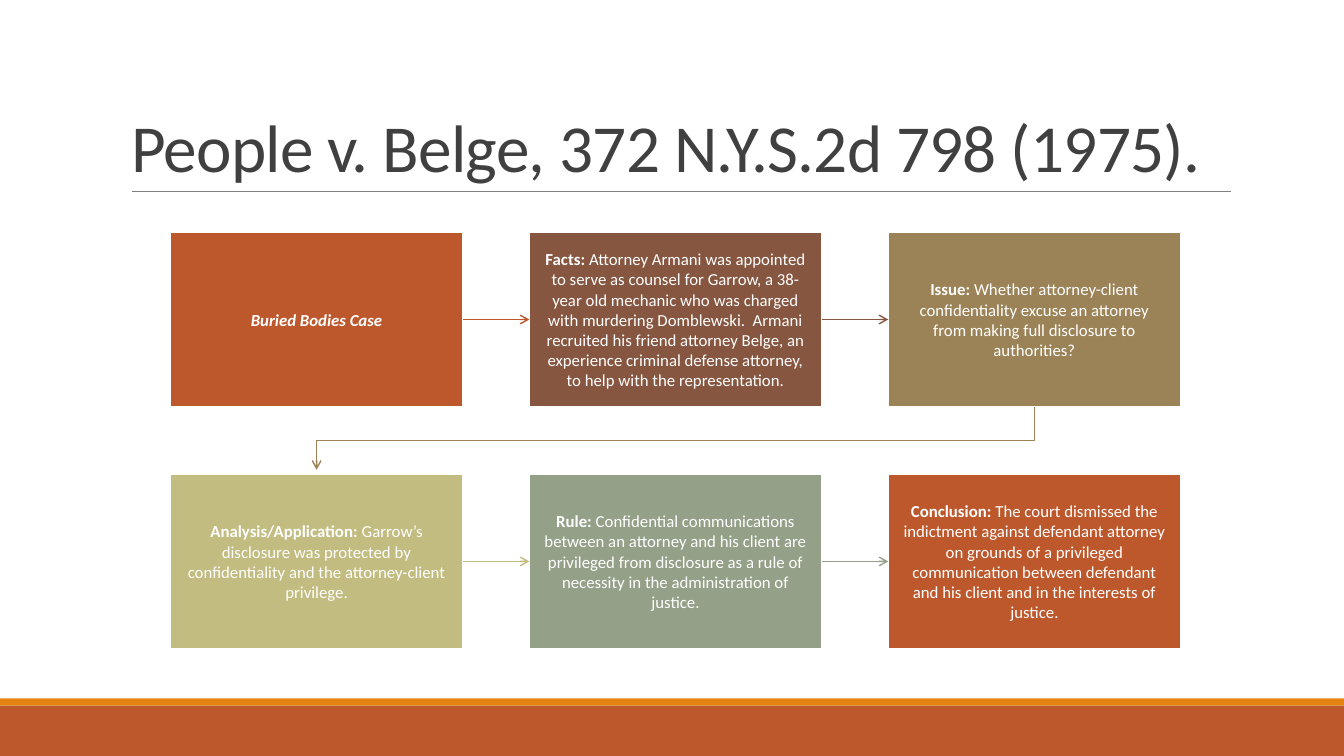
from dataclasses import dataclass

from lxml.etree import SubElement
from pptx import Presentation
from pptx.dml.color import RGBColor
from pptx.enum.shapes import MSO_CONNECTOR as Conn, MSO_SHAPE as Shape
from pptx.enum.text import MSO_ANCHOR as Anchor, MSO_AUTO_SIZE as AutoSize, PP_ALIGN as Align
from pptx.oxml.ns import qn
from pptx.util import Inches, Pt

WHITE = RGBColor(0xFF, 0xFF, 0xFF)
DARK = RGBColor(0x40, 0x40, 0x40)
GRAY = RGBColor(0x80, 0x80, 0x80)
ORANGE = RGBColor(0xE4, 0x83, 0x12)
RUST = RGBColor(0xBD, 0x58, 0x2C)
BROWN = RGBColor(0x86, 0x56, 0x40)
TAN = RGBColor(0x9B, 0x83, 0x57)
STRAW = RGBColor(0xC2, 0xBC, 0x80)
SAGE = RGBColor(0x94, 0xA0, 0x88)

FONT = "Calibri"
SLIDE_W, SLIDE_H = 13.33, 7.5
COLS = 3
GRID_LEFT, GRID_TOP = 1.69, 2.3
COL_PITCH, ROW_PITCH = 3.56, 2.4
BOX_W, BOX_H = 2.9, 1.74
ARROW_GAP = 0.04
TOP, LEFT, BOTTOM, RIGHT = range(4)


@dataclass(frozen=True)
class Step:
    label: str
    body: str
    color: RGBColor
    italic: bool = False


STEPS = [
    Step("Buried Bodies Case", "", RUST, italic=True),
    Step("Facts: ", "Attorney Armani was appointed to serve as counsel for Garrow, "
         "a 38-year old mechanic who was charged with murdering Domblewski.  Armani "
         "recruited his friend attorney Belge, an experience criminal defense attorney, "
         "to help with the representation.", BROWN),
    Step("Issue: ", "Whether attorney-client confidentiality excuse an attorney from "
         "making full disclosure to authorities?", TAN),
    Step("Analysis/Application: ", "Garrow’s disclosure was protected by confidentiality "
         "and the attorney-client privilege.", STRAW),
    Step("Rule: ", "Confidential communications between an attorney and his client are "
         "privileged from disclosure as a rule of necessity in the administration of "
         "justice.", SAGE),
    Step("Conclusion: ", "The court dismissed the indictment against defendant attorney "
         "on grounds of a privileged communication between defendant and his client and "
         "in the interests of justice.", RUST),
]


def add_run(p, text: str, *, size: float, color: RGBColor, bold=False, italic=False):
    r = p.add_run()
    r.text = text
    f = r.font
    f.name, f.size, f.bold, f.italic = FONT, Pt(size), bold, italic
    f.color.rgb = color
    return r


def add_rect(s, left: float, top: float, width: float, height: float, fill: RGBColor):
    sp = s.shapes.add_shape(Shape.RECTANGLE, Inches(left), Inches(top),
                            Inches(width), Inches(height))
    sp.shadow.inherit = False
    sp.fill.solid()
    sp.fill.fore_color.rgb = fill
    sp.line.fill.background()
    return sp


def add_line(s, x1: float, y1: float, x2: float, y2: float, color: RGBColor, weight: float):
    line = s.shapes.add_connector(Conn.STRAIGHT, Inches(x1), Inches(y1),
                                  Inches(x2), Inches(y2))
    line.line.color.rgb = color
    line.line.width = Pt(weight)
    SubElement(line._element.spPr, qn("a:effectLst"))
    return line


def add_arrowhead(sp) -> None:
    SubElement(sp.line._get_or_add_ln(), qn("a:tailEnd"), type="arrow")


def add_title(s, text: str) -> None:
    title = s.shapes.title
    title.left, title.top = Inches(1.2), Inches(0.31)
    title.width, title.height = Inches(11), Inches(1.59)
    tf = title.text_frame
    tf.auto_size, tf.word_wrap = AutoSize.NONE, True
    tf.vertical_anchor = Anchor.BOTTOM
    p = tf.paragraphs[0]
    p.alignment, p.line_spacing = Align.LEFT, 0.85
    r = add_run(p, text, size=48, color=DARK)
    r.font._element.set("spc", "-50")


def cell_origin(index: int) -> tuple[float, float]:
    row, col = divmod(index, COLS)
    return GRID_LEFT + col * COL_PITCH, GRID_TOP + row * ROW_PITCH


def add_step(s, index: int, step: Step):
    sp = add_rect(s, *cell_origin(index), BOX_W, BOX_H, step.color)
    sp.line.color.rgb = WHITE
    sp.line.width = Pt(1.25)
    tf = sp.text_frame
    tf.word_wrap, tf.vertical_anchor = True, Anchor.MIDDLE
    tf.margin_left = tf.margin_right = Inches(0.14)
    tf.margin_top = tf.margin_bottom = Inches(0.15)
    p = tf.paragraphs[0]
    p.alignment = Align.CENTER
    add_run(p, step.label, size=12, color=WHITE, bold=True, italic=step.italic)
    if step.body:
        add_run(p, step.body, size=12, color=WHITE)
    return sp


def join_in_row(s, start, end, color: RGBColor) -> None:
    line = add_line(s, 0, 0, 1, 1, color, 1)
    line.begin_connect(start, RIGHT)
    line.end_connect(end, LEFT)
    add_arrowhead(line)


def join_rows(s, index: int, color: RGBColor) -> None:
    """Bent arrow from the last box of a row to the first box of the next."""
    (x1, y1), (x2, y2) = cell_origin(index), cell_origin(index + 1)
    x1, x2, y1 = x1 + BOX_W / 2, x2 + BOX_W / 2, y1 + BOX_H
    bend = (y1 + y2) / 2
    builder = s.shapes.build_freeform(Inches(x1), Inches(y1))
    builder.add_line_segments(
        [(Inches(x), Inches(y)) for x, y in
         ((x1, bend), (x2, bend), (x2, y2 - ARROW_GAP))], close=False)
    sp = builder.convert_to_shape()
    sp.shadow.inherit = False
    sp.fill.background()
    sp.line.color.rgb = color
    sp.line.width = Pt(1)
    add_arrowhead(sp)


def main() -> None:
    prs = Presentation()
    prs.slide_width, prs.slide_height = Inches(SLIDE_W), Inches(SLIDE_H)
    s = prs.slides.add_slide(prs.slide_layouts[5])

    add_rect(s, 0, 7, SLIDE_W, 0.5, RUST)
    add_rect(s, 0, 6.93, SLIDE_W, 0.07, ORANGE)
    add_line(s, 1.31, 1.9, 12.21, 1.9, GRAY, 0.5)
    add_title(s, "People v. Belge, 372 N.Y.S.2d 798 (1975).")

    boxes = [add_step(s, i, step) for i, step in enumerate(STEPS)]
    for i, step in enumerate(STEPS[:-1]):
        if (i + 1) % COLS:
            join_in_row(s, boxes[i], boxes[i + 1], step.color)
        else:
            join_rows(s, i, step.color)

    prs.save("out.pptx")


if __name__ == "__main__":
    main()
